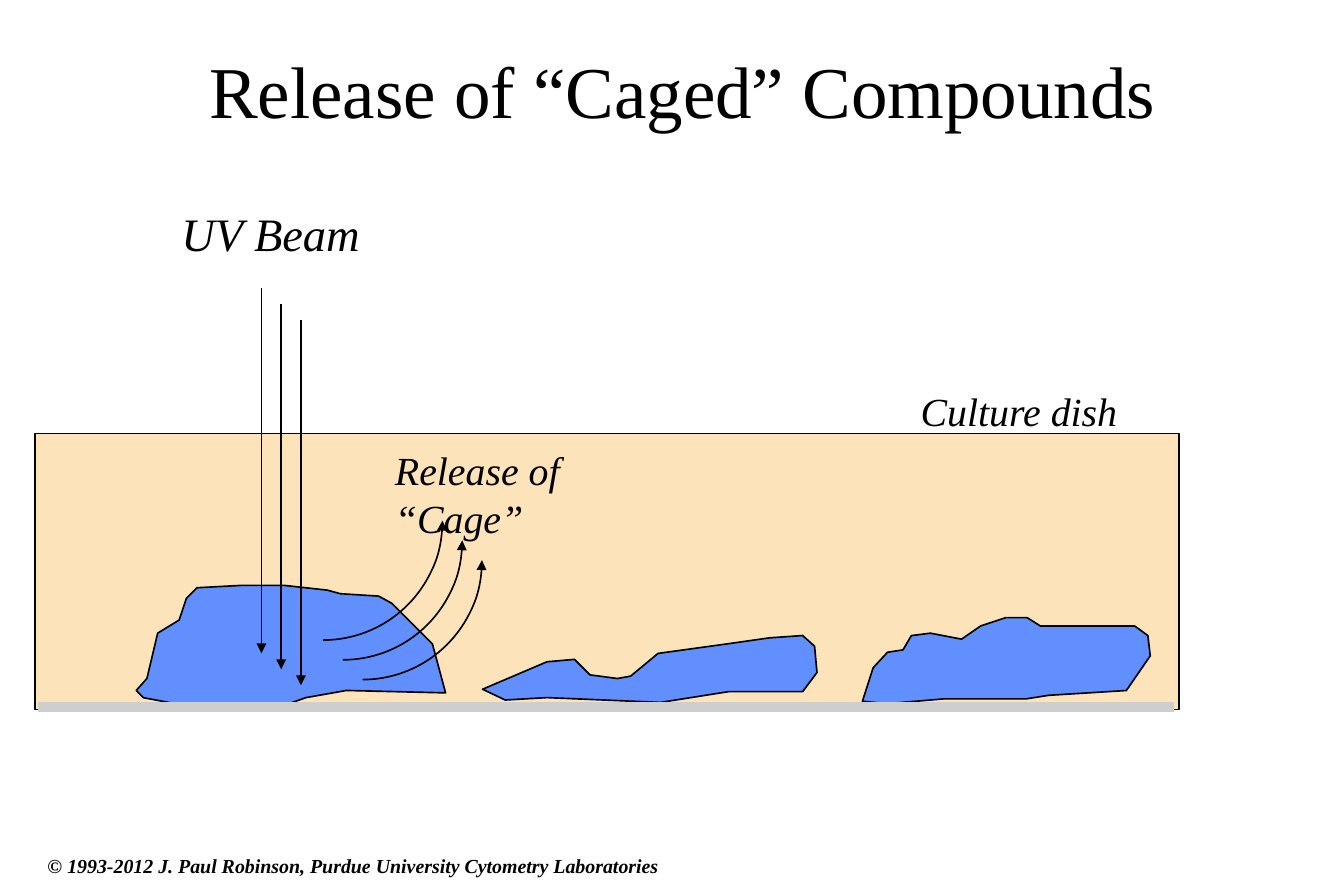
from lxml import etree
from pptx import Presentation
from pptx import util as u
from pptx.dml.color import RGBColor
from pptx.enum import shapes, text
from pptx.oxml import ns

COLOURS = {"ink": "000000", "medium": "FDE3BA", "cell": "618FFD", "base": "CECECE"}
FONT = "Times New Roman"

# Text: wording, place (left, top, width, height in cm), format
LABELS = [
    ("© 1993-2012 J. Paul Robinson, Purdue University Cytometry Laboratories",
     (0.76, 18.01, 13.97, 0.76), dict(size=12, bold=True, italic=True)),
    ("Release of “Caged” Compounds", (3.73, 0.3, 21.59, 3.18),
     dict(size=44, centred=True, wrap=True)),
    ("UV Beam", (3.56, 4.22, 4.39, 1.47), dict(size=28, italic=True, inset=(0.3, 0.15))),
    ("Release of\v“Cage”", (8.15, 9.35, 4.8, 2.3), dict(size=24, italic=True)),
    ("Culture dish", (19.33, 8.1, 4.7, 1.27), dict(size=24, italic=True)),
]

# Dish and its base, in cm
DISH = (0.74, 9.22, 24.33, 5.87)
BASE = (0.81, 15.04, 24.97, 15.04)

# Cell outlines, in units of 0.0254 cm
UNIT = 0.0254
CELLS = [
    [(132, 530), (150, 519), (156, 501), (165, 492), (202, 490), (238, 490),
     (274, 494), (285, 497), (317, 499), (328, 505), (362, 539), (373, 580),
     (290, 578), (256, 584), (242, 589), (157, 591), (120, 584), (114, 578),
     (123, 568)],
    [(458, 554), (481, 552), (494, 565), (517, 568), (528, 566), (551, 547),
     (609, 539), (644, 534), (672, 532), (682, 541), (684, 563), (672, 579),
     (610, 579), (553, 588), (458, 584), (423, 586), (404, 577)],
    [(731, 559), (743, 546), (756, 544), (763, 532), (779, 530), (805, 535),
     (821, 524), (842, 517), (860, 517), (871, 524), (950, 524), (961, 532),
     (963, 549), (943, 578), (878, 582), (859, 585), (790, 585), (743, 589),
     (722, 587)],
]

# Arrow families, in cm: first place, shift to the next one, size
ARROWS = 3
BEAM = dict(x=5.56, y=6.12, dx=0.42, dy=0.34, length=7.77)
RELEASE = dict(x=4.33, y=8.53, step=0.42, diameter=5.08)

deck = Presentation()
deck.slide_width, deck.slide_height = u.Cm(28.58), u.Cm(19.05)
page = deck.slides.add_slide(deck.slide_layouts[6])


def colour(name):
    return RGBColor.from_string(COLOURS[name])


def cm(values):
    return [u.Cm(value) for value in values]


def stroke(item, name="ink", width=1, arrow=None):
    item.line.color.rgb = colour(name)
    item.line.width = u.Pt(width)
    if arrow:
        etree.SubElement(item.line._get_or_add_ln(), ns.qn("a:" + arrow), type="triangle")


def paint(shape, fill=None, **line):
    shape.shadow.inherit = False
    if fill:
        shape.fill.solid()
        shape.fill.fore_color.rgb = colour(fill)
    else:
        shape.fill.background()
    stroke(shape, **line)


def add_line(ends, **line):
    connector = page.shapes.add_connector(shapes.MSO_CONNECTOR.STRAIGHT, *cm(ends))
    stroke(connector, **line)
    etree.SubElement(connector._element.spPr, ns.qn("a:effectLst"))


def add_text(wording, place, size, bold=False, italic=False, centred=False,
             wrap=False, inset=(0.25, 0.13)):
    box = page.shapes.add_textbox(*cm(place))
    frame = box.text_frame
    frame.word_wrap = wrap
    frame.margin_left = frame.margin_right = u.Cm(inset[0])
    frame.margin_top = frame.margin_bottom = u.Cm(inset[1])
    frame.vertical_anchor = text.MSO_ANCHOR.MIDDLE if centred else text.MSO_ANCHOR.TOP
    para = frame.paragraphs[0]
    para.text = wording
    para.alignment = text.PP_ALIGN.CENTER if centred else text.PP_ALIGN.LEFT
    for span in para.runs:
        span.font.name, span.font.size = FONT, u.Pt(size)
        span.font.bold, span.font.italic = bold, italic
        span.font.color.rgb = colour("ink")


# Culture dish
dish = page.shapes.add_shape(shapes.MSO_SHAPE.RECTANGLE, *cm(DISH))
paint(dish, "medium")

# Cells resting on the base
for outline in CELLS:
    builder = page.shapes.build_freeform(*outline[0], scale=u.Cm(UNIT))
    builder.add_line_segments(outline[1:], close=True)
    paint(builder.convert_to_shape(), "cell")
add_line(BASE, name="base", width=6)

# UV beam
for i in range(ARROWS):
    x, y = BEAM["x"] + i * BEAM["dx"], BEAM["y"] + i * BEAM["dy"]
    add_line((x, y, x, y + BEAM["length"]), arrow="tailEnd")

# Release arrows: quarter circles from right to bottom
for i in range(ARROWS):
    shift = i * RELEASE["step"]
    arc = page.shapes.add_shape(
        shapes.MSO_SHAPE.ARC,
        *cm((RELEASE["x"] + shift, RELEASE["y"] + shift,
             RELEASE["diameter"], RELEASE["diameter"])))
    arc.adjustments[0], arc.adjustments[1] = 0, 54
    paint(arc, arrow="headEnd")

# Title, labels and copyright line
for wording, place, style in LABELS:
    add_text(wording, place, **style)

deck.save("out.pptx")
